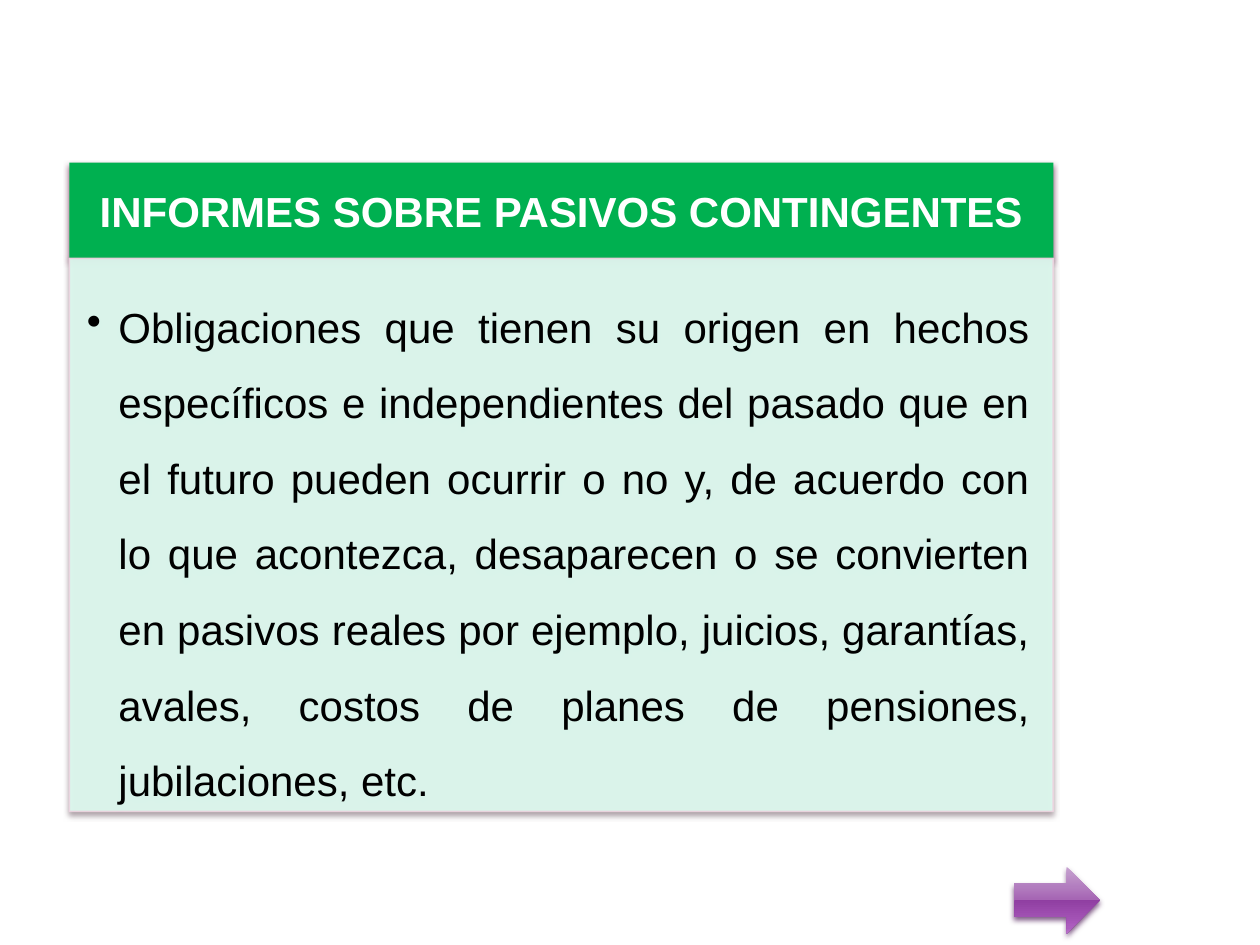
import pptx
import pptx.util
import pptx.dml.color
import pptx.enum.shapes
import pptx.enum.text
import pptx.oxml
import pptx.oxml.ns
from pptx.util import Inches

FONT = "Arial"
COLORS = {
    "header": "00B050", "body": "DFFDF2", "body_line": "EDD4E0",
    "header_text": "FFFFFF", "body_text": "000000",
    "header_shadow": "804365", "body_shadow": "93838B", "arrow_shadow": "6A3F73",
}
ARROW_STOPS = [(0, "C6A2D0"), (49, "A666B4"), (49, "8F3EA1"), (92, "AD5DBF"), (100, "BA76CA")]
SHAPE = pptx.enum.shapes.MSO_SHAPE
ALIGN = pptx.enum.text.PP_ALIGN
ANCHOR = pptx.enum.text.MSO_ANCHOR
NS = pptx.oxml.ns.nsdecls("a")

TITLE = "INFORMES SOBRE PASIVOS CONTINGENTES"
BODY = ("Obligaciones que tienen su origen en hechos específicos e independientes "
        "del pasado que en el futuro pueden ocurrir o no y, de acuerdo con lo que "
        "acontezca, desaparecen o se convierten en pasivos reales por ejemplo, juicios, "
        "garantías, avales, costos de planes de pensiones, jubilaciones, etc.")


def rgb(name):
    return pptx.dml.color.RGBColor.from_string(COLORS[name])


def add_shape(shapes, kind, box, shadow):
    """Add a shape without outline and with a soft shadow below it."""
    sp = shapes.add_shape(kind, *map(Inches, box))
    sp.line.fill.background()
    sp.shadow.inherit = False
    effects = sp._element.spPr.find(pptx.oxml.ns.qn("a:effectLst"))
    effects.append(pptx.oxml.parse_xml(
        f'<a:outerShdw {NS} blurRad="{pptx.util.Pt(3.1)}" dist="{pptx.util.Pt(2)}" '
        f'dir="5400000" rotWithShape="0"><a:srgbClr val="{COLORS[shadow]}">'
        '<a:alpha val="83000"/></a:srgbClr></a:outerShdw>'))
    return sp


def add_panel(shapes, box, fill, shadow):
    sp = add_shape(shapes, SHAPE.RECTANGLE, box, shadow)
    sp.fill.solid()
    sp.fill.fore_color.rgb = rgb(fill)
    return sp


def set_alpha(fill_parent, percent):
    color = fill_parent.find(".//" + pptx.oxml.ns.qn("a:srgbClr"))
    color.append(pptx.oxml.parse_xml(f'<a:alpha {NS} val="{percent * 1000}"/>'))


def write_text(sp, text, color, insets, anchor, align):
    tf = sp.text_frame
    tf.word_wrap = True
    tf.vertical_anchor = anchor
    tf.margin_left, tf.margin_top, tf.margin_right, tf.margin_bottom = map(Inches, insets)
    p = tf.paragraphs[0]
    p.text = text
    p.alignment = align
    p.font.name = FONT
    p.font.size = pptx.util.Pt(24)
    p.font.color.rgb = rgb(color)
    return p


def add_bullet(p, indent):
    pPr = p._p.get_or_add_pPr()
    pPr.set("marL", str(Inches(indent)))
    pPr.set("indent", str(-Inches(indent)))
    pPr.insert_element_before(
        pptx.oxml.parse_xml(f'<a:buChar {NS} char="•"/>'), "a:tabLst", "a:defRPr", "a:extLst")


def add_gradient_arrow(shapes, box):
    sp = add_shape(shapes, SHAPE.RIGHT_ARROW, box, "arrow_shadow")
    stops = "".join(f'<a:gs pos="{pos * 1000}"><a:srgbClr val="{color}"/></a:gs>'
                    for pos, color in ARROW_STOPS)
    sp._element.spPr.find(pptx.oxml.ns.qn("a:prstGeom")).addnext(pptx.oxml.parse_xml(
        f'<a:gradFill {NS} rotWithShape="1"><a:gsLst>{stops}</a:gsLst>'
        '<a:lin ang="5400000" scaled="0"/></a:gradFill>'))


def main():
    prs = pptx.Presentation()
    prs.slide_width, prs.slide_height = Inches(10), Inches(7.5)
    s = prs.slides.add_slide(prs.slide_layouts[6])
    card = s.shapes.add_group_shape()

    # Card header
    header = add_panel(card.shapes, (0.55, 1.29, 7.81, 0.76), "header", "header_shadow")
    p = write_text(header, TITLE, "header_text", (0.19, 0.11, 0.19, 0.11),
                   ANCHOR.MIDDLE, ALIGN.CENTER)
    p.font.bold = True

    # Card body
    body = add_panel(card.shapes, (0.55, 2.05, 7.81, 4.39), "body", "body_shadow")
    set_alpha(body._element.spPr.find(pptx.oxml.ns.qn("a:solidFill")), 90)
    body.line.color.rgb = rgb("body_line")
    body.line.width = pptx.util.Pt(0.9)
    set_alpha(body._element.spPr.find(pptx.oxml.ns.qn("a:ln")), 90)
    p = write_text(body, BODY, "body_text", (0.14, 0.14, 0.19, 0.21),
                   ANCHOR.TOP, ALIGN.JUSTIFY)
    p.level = 1
    p.line_spacing = 1.5
    add_bullet(p, 0.25)

    # Arrow to the next slide
    add_gradient_arrow(s.shapes, (8.05, 6.88, 0.68, 0.53))

    prs.save("out.pptx")


if __name__ == "__main__":
    main()
